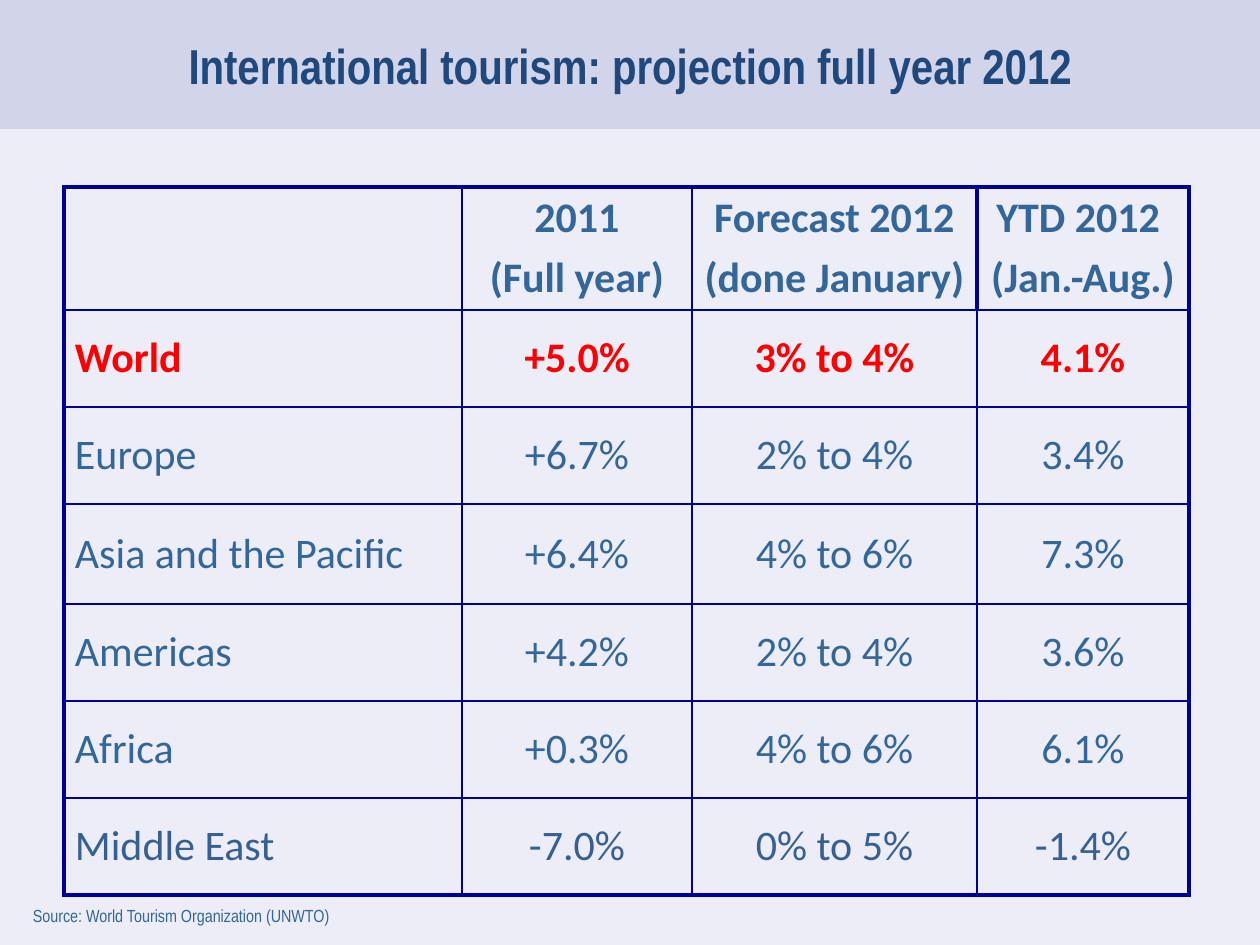
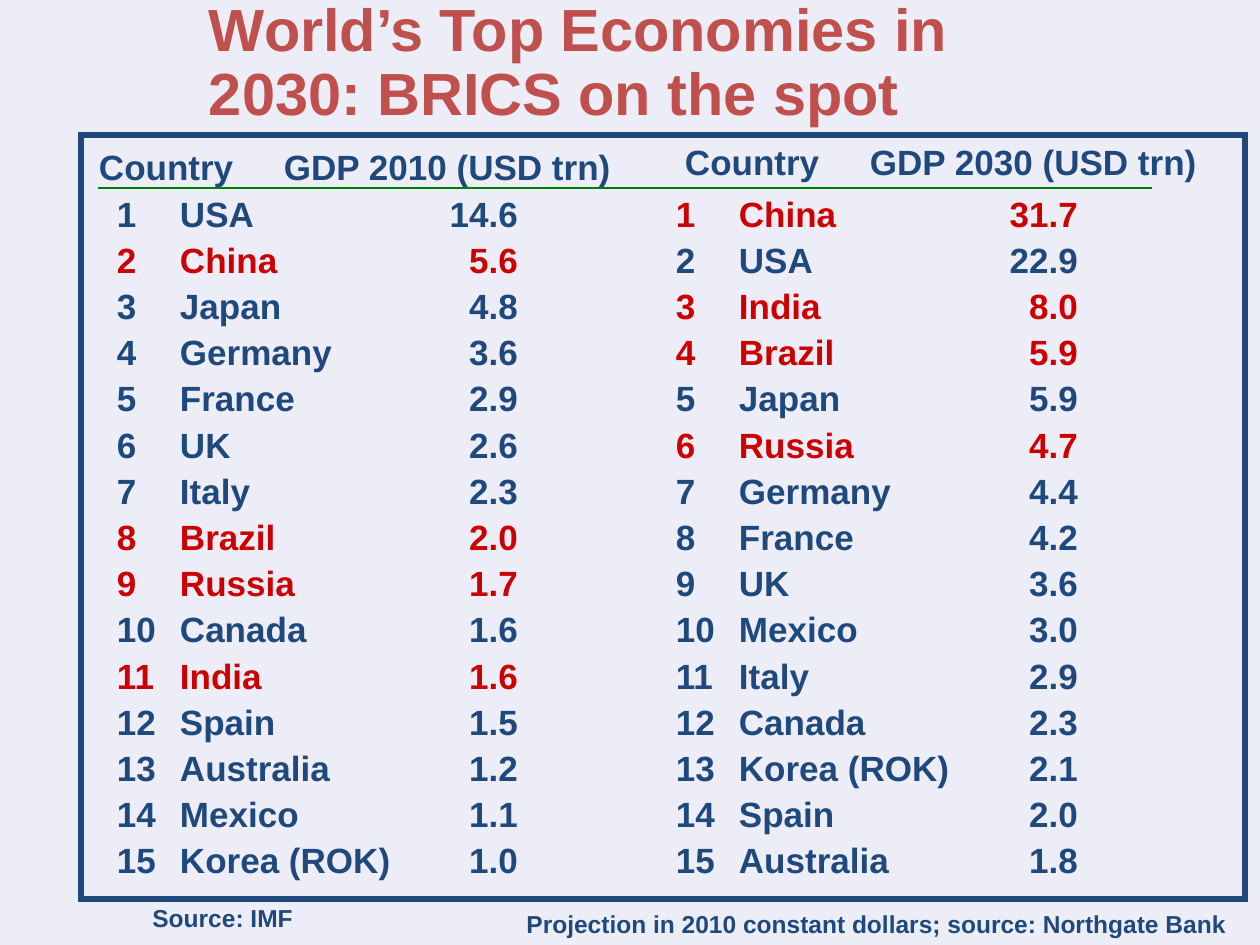
import pptx
import pptx.util
import pptx.dml.color
import pptx.enum.shapes
import pptx.enum.text
import pptx.oxml
import pptx.oxml.ns
import lxml.etree

RGBColor = pptx.dml.color.RGBColor
PP_ALIGN = pptx.enum.text.PP_ALIGN
ANCHOR = pptx.enum.text.MSO_ANCHOR
Pt = pptx.util.Pt
qn = pptx.oxml.ns.qn

BACKGROUND = RGBColor(0xED, 0xED, 0xF7)
BAND = RGBColor(0xD2, 0xD4, 0xEA)
NAVY = RGBColor(0x1F, 0x49, 0x7D)
STEEL = RGBColor(0x33, 0x66, 0x99)
SLATE = RGBColor(0x37, 0x60, 0x92)
GRID = RGBColor(0x00, 0x00, 0x99)
RED = RGBColor(0xFF, 0x00, 0x00)
BRICK = RGBColor(0xC0, 0x50, 0x4D)
CRIMSON = RGBColor(0xCC, 0x00, 0x00)
GREEN = RGBColor(0x00, 0x80, 0x00)

PX_PER_INCH = 126
THIN, THICK = 1, 2.25

HEADER = ["", "2011\n(Full year)", "Forecast 2012\n(done January)", "YTD 2012 \n(Jan.-Aug.)"]
REGIONS = [
    ["World", "+5.0%", "3% to 4%", "4.1%"],
    ["Europe", "+6.7%", "2% to 4%", "3.4%"],
    ["Asia and the Pacific", "+6.4%", "4% to 6%", "7.3%"],
    ["Americas", "+4.2%", "2% to 4%", "3.6%"],
    ["Africa", "+0.3%", "4% to 6%", "6.1%"],
    ["Middle East", "-7.0%", "0% to 5%", "-1.4%"],
]
COL_WIDTHS = [398, 230, 285, 212]
ROW_HEIGHTS = [122, 97, 97, 100, 97, 97, 97]

BRICS = {"Brazil", "Russia", "India", "China"}
GDP_2010 = [
    ("USA", "14.6"), ("China", "5.6"), ("Japan", "4.8"), ("Germany", "3.6"),
    ("France", "2.9"), ("UK", "2.6"), ("Italy", "2.3"), ("Brazil", "2.0"),
    ("Russia", "1.7"), ("Canada", "1.6"), ("India", "1.6"), ("Spain", "1.5"),
    ("Australia", "1.2"), ("Mexico", "1.1"), ("Korea (ROK)", "1.0"),
]
GDP_2030 = [
    ("China", "31.7"), ("USA", "22.9"), ("India", "8.0"), ("Brazil", "5.9"),
    ("Japan", "5.9"), ("Russia", "4.7"), ("Germany", "4.4"), ("France", "4.2"),
    ("UK", "3.6"), ("Mexico", "3.0"), ("Italy", "2.9"), ("Canada", "2.3"),
    ("Korea (ROK)", "2.1"), ("Spain", "2.0"), ("Australia", "1.8"),
]


def px(n):
    return pptx.util.Emu(round(n * 914400 / PX_PER_INCH))


def add_run(p, text, font, size, color, bold=False):
    r = p.add_run()
    r.text = text
    r.font.name = font
    r.font.size = Pt(size)
    r.font.bold = bold
    r.font.color.rgb = color


def set_insets(tf, inset):
    tf.margin_left = tf.margin_right = tf.margin_top = tf.margin_bottom = px(inset)


def add_title(s, box, text, font, size, color, align, anchor, inset):
    sp = s.shapes.title
    sp.left, sp.top, sp.width, sp.height = map(px, box)
    tf = sp.text_frame
    tf.auto_size = pptx.enum.text.MSO_AUTO_SIZE.NONE
    tf.word_wrap = True
    tf.vertical_anchor = anchor
    set_insets(tf, inset)
    p = tf.paragraphs[0]
    p.alignment = align
    add_run(p, text, font, size, color, True)
    return sp


def add_text(s, box, lines, font, size, bold=True, align=PP_ALIGN.LEFT, inset=None):
    tf = s.shapes.add_textbox(*map(px, box)).text_frame
    tf.word_wrap = True
    if inset is not None:
        set_insets(tf, inset)
    for i, (text, color) in enumerate(lines):
        p = tf.add_paragraph() if i else tf.paragraphs[0]
        p.alignment = align
        add_run(p, text, font, size, color, bold)
    return tf.paragraphs


def add_tab(p, pos):
    tabs = lxml.etree.SubElement(p._p.get_or_add_pPr(), qn("a:tabLst"))
    lxml.etree.SubElement(tabs, qn("a:tab"), pos=str(px(pos)), algn="l")


def number(p, indent):
    pPr = p._p.get_or_add_pPr()
    pPr.set("marL", str(px(indent)))
    pPr.set("indent", str(-px(indent)))
    lxml.etree.SubElement(pPr, qn("a:buAutoNum"), type="arabicPlain")


def set_borders(cell, widths):
    tcPr = cell._tc.get_or_add_tcPr()
    for side, width in zip("LRTB", widths):
        ln = lxml.etree.SubElement(tcPr, qn("a:ln" + side), w=str(Pt(width)))
        fill = lxml.etree.SubElement(ln, qn("a:solidFill"))
        lxml.etree.SubElement(fill, qn("a:srgbClr"), val=str(GRID))


def fill_cell(cell, text, color, bold, align):
    cell.fill.background()
    cell.vertical_anchor = ANCHOR.MIDDLE
    cell.margin_left = cell.margin_right = px(11)
    cell.margin_top = cell.margin_bottom = px(6)
    tf = cell.text_frame
    for i, line in enumerate(text.split("\n") if text else []):
        p = tf.add_paragraph() if i else tf.paragraphs[0]
        p.alignment = align
        p.space_before = Pt(5)
        add_run(p, line, "Calibri", 24, color, bold)


def add_region_table(s, left, top):
    rows = [HEADER] + REGIONS
    colors = {"World": RED, "Middle East": SLATE}
    last_row, last_col = len(rows) - 1, len(HEADER) - 1
    box = (left, top, sum(COL_WIDTHS), sum(ROW_HEIGHTS))
    table = s.shapes.add_table(len(rows), len(HEADER), *map(px, box)).table
    table.first_row = table.horz_banding = False
    for col, width in zip(table.columns, COL_WIDTHS):
        col.width = px(width)
    for i, values in enumerate(rows):
        table.rows[i].height = px(ROW_HEIGHTS[i])
        for j, text in enumerate(values):
            cell = table.cell(i, j)
            edges = (
                j == 0 or (i, j) == (0, last_col),
                j == last_col or (i, j) == (0, last_col - 1),
                i == 0,
                i == last_row,
            )
            set_borders(cell, [THICK if edge else THIN for edge in edges])
            align = PP_ALIGN.CENTER if j else PP_ALIGN.LEFT
            fill_cell(cell, text, colors.get(values[0], STEEL), i < 2, align)


def add_frame(s, box):
    sp = s.shapes.add_shape(pptx.enum.shapes.MSO_SHAPE.RECTANGLE, *map(px, box))
    sp.shadow.inherit = False
    sp.fill.background()
    sp.line.color.rgb = NAVY
    sp.line.width = Pt(3)
    lxml.etree.SubElement(sp.line._get_or_add_ln(), qn("a:miter"), lim="800000")


def add_rule(s, x1, x2, y):
    kind = pptx.enum.shapes.MSO_CONNECTOR.STRAIGHT
    line = s.shapes.add_connector(kind, px(x1), px(y), px(x2), px(y))
    line.line.color.rgb = GREEN
    line.line.width = Pt(0.75)
    lxml.etree.SubElement(line._element.spPr, qn("a:effectLst"))


def add_ranking(s, year, economies, head_left, head_top, names_left, values_right):
    head = add_text(s, (head_left, head_top, 530, 43),
                    [(f"Country\tGDP {year} (USD trn)", NAVY)], "Arial", 20, inset=0)
    add_tab(head[0], 185)
    colors = [CRIMSON if name in BRICS else NAVY for name, _ in economies]
    names, values = zip(*economies)
    for p in add_text(s, (names_left, 188, 300, 699), zip(names, colors), "Arial", 20, inset=0):
        p.line_spacing = 1.1
        number(p, 63)
        add_tab(p, 65)
    for p in add_text(s, (values_right - 100, 188, 100, 699), zip(values, colors),
                      "Arial", 20, align=PP_ALIGN.RIGHT, inset=0):
        p.line_spacing = 1.1


def build_projection(s):
    title = add_title(s, (0, 0, 1260, 129), "International tourism: projection full year 2012",
                      "Arial Narrow", 28, NAVY, PP_ALIGN.CENTER, ANCHOR.MIDDLE, 13)
    title.fill.solid()
    title.fill.fore_color.rgb = BAND
    add_region_table(s, 64, 187)
    add_text(s, (19, 899, 324, 34), [("Source: World Tourism Organization (UNWTO)", STEEL)],
             "Arial Narrow", 10, bold=False, align=PP_ALIGN.CENTER)


def build_economies(s):
    title = add_title(s, (209, 0, 856, 130), "World’s Top Economies in 2030: BRICS on the spot",
                      "Arial", 34, BRICK, PP_ALIGN.LEFT, ANCHOR.TOP, 0)
    title.text_frame.paragraphs[0].line_spacing = 0.9
    add_frame(s, (81, 135, 1164, 764))
    add_rule(s, 98, 1152, 188)
    add_ranking(s, 2010, GDP_2010, 99, 145, 117, 518)
    add_ranking(s, 2030, GDP_2030, 685, 140, 676, 1078)
    add_text(s, (140, 897, 180, 43), [("Source: IMF", NAVY)], "Arial", 14)
    add_text(s, (514, 903, 740, 43),
             [("Projection in 2010 constant dollars; source: Northgate Bank", NAVY)], "Arial", 14)


def main():
    prs = pptx.Presentation()
    prs.slide_width, prs.slide_height = px(1260), px(945)
    fill = prs.slide_master.background.fill
    fill.solid()
    fill.fore_color.rgb = BACKGROUND
    for build in (build_projection, build_economies):
        build(prs.slides.add_slide(prs.slide_layouts[5]))
    prs.save("out.pptx")


if __name__ == "__main__":
    main()
